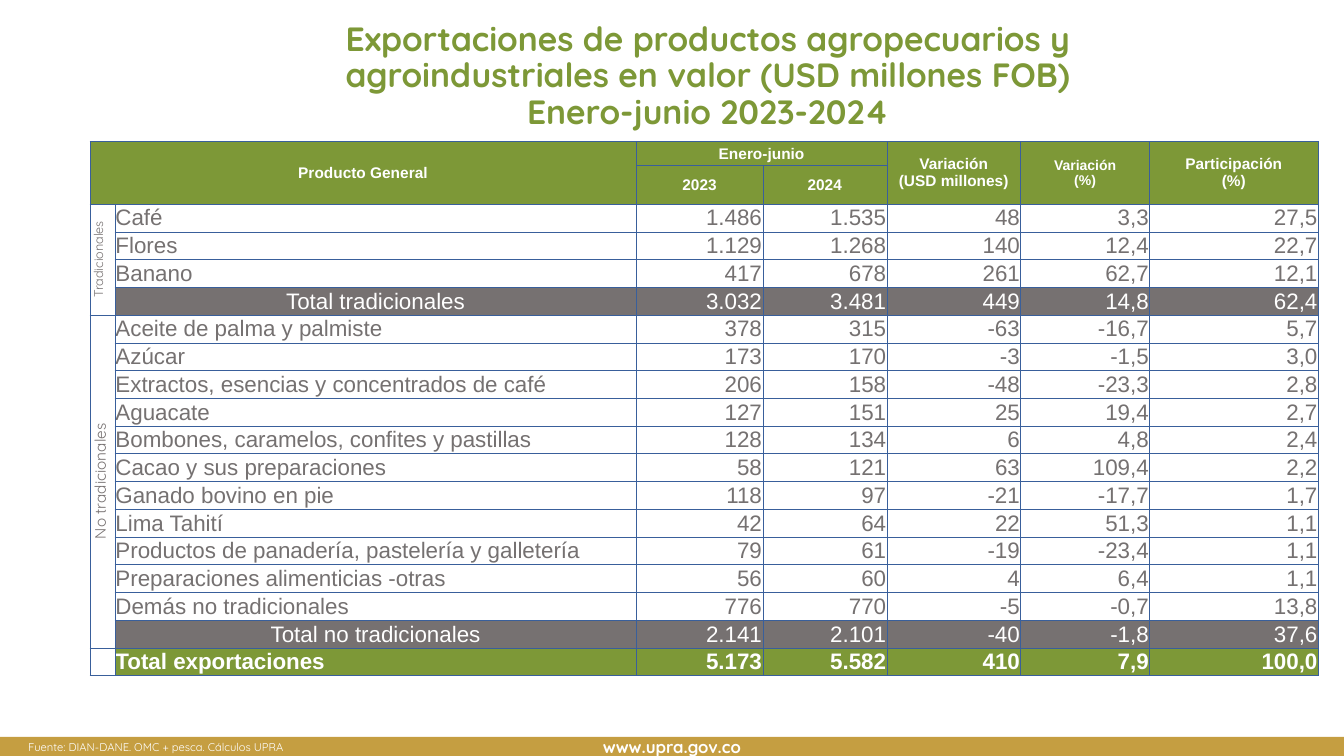
from dataclasses import dataclass

from lxml.etree import SubElement
from pptx import Presentation
from pptx.dml.color import RGBColor
from pptx.enum.shapes import MSO_SHAPE as Shape
from pptx.enum.text import MSO_ANCHOR as Anchor, MSO_AUTO_SIZE as AutoSize, PP_ALIGN as Align
from pptx.oxml.ns import qn
from pptx.slide import Slide
from pptx.table import Table, _Cell as Cell
from pptx.text.text import TextFrame, _Paragraph as Paragraph
from pptx.util import Cm, Pt

COLORS = {"green": "7D9837", "gold": "C59E41", "gray": "767171", "body": "757171",
          "white": "FFFFFF", "border": "395F9B"}
COLUMN_WIDTHS = [0.63, 13.15, 3.18, 3.13, 3.37, 3.25, 4.25]
HEADER_HEIGHTS = [0.61, 0.97]
ROW_HEIGHT = 0.7


@dataclass
class Style:
    size: float
    color: str
    font: str = "Arial"
    bold: bool = False
    align: Align = Align.CENTER
    fill: str = ""


@dataclass
class Heading:
    row: int
    column: int
    last_row: int
    last_column: int
    lines: list[str]
    size: float = 11


@dataclass
class Group:
    first_row: int
    last_row: int
    name: str
    size: float


@dataclass
class Product:
    name: str
    values: str
    kind: str = "item"


KINDS = {
    "item": Style(16, "body", align=Align.LEFT),
    "subtotal": Style(16, "white", fill="gray"),
    "total": Style(16, "white", bold=True, align=Align.LEFT, fill="green"),
}
HEADINGS = [
    Heading(0, 0, 1, 1, ["Producto General"]),
    Heading(0, 2, 0, 3, ["Enero-junio"]),
    Heading(1, 2, 1, 2, ["2023"]),
    Heading(1, 3, 1, 3, ["2024"]),
    Heading(0, 4, 1, 4, ["Variación", "(USD millones)"]),
    Heading(0, 5, 1, 5, ["Variación", "(%)"], 10),
    Heading(0, 6, 1, 6, ["Participación", "(%)"]),
]
GROUPS = [Group(2, 5, "Tradicionales", 9), Group(6, 17, "No tradicionales", 11)]
PRODUCTS = [
    Product("Café", "1.486 1.535 48 3,3 27,5"),
    Product("Flores", "1.129 1.268 140 12,4 22,7"),
    Product("Banano", "417 678 261 62,7 12,1"),
    Product("Total tradicionales", "3.032 3.481 449 14,8 62,4", "subtotal"),
    Product("Aceite de palma y palmiste", "378 315 -63 -16,7 5,7"),
    Product("Azúcar", "173 170 -3 -1,5 3,0"),
    Product("Extractos, esencias y concentrados de café", "206 158 -48 -23,3 2,8"),
    Product("Aguacate", "127 151 25 19,4 2,7"),
    Product("Bombones, caramelos, confites y pastillas", "128 134 6 4,8 2,4"),
    Product("Cacao y sus preparaciones", "58 121 63 109,4 2,2"),
    Product("Ganado bovino en pie", "118 97 -21 -17,7 1,7"),
    Product("Lima Tahití", "42 64 22 51,3 1,1"),
    Product("Productos de panadería, pastelería y galletería", "79 61 -19 -23,4 1,1"),
    Product("Preparaciones alimenticias -otras", "56 60 4 6,4 1,1"),
    Product("Demás no tradicionales", "776 770 -5 -0,7 13,8"),
    Product("Total no tradicionales", "2.141 2.101 -40 -1,8 37,6", "subtotal"),
    Product("Total exportaciones", "5.173 5.582 410 7,9 100,0", "total"),
]


def rgb(name: str) -> RGBColor:
    return RGBColor.from_string(COLORS[name])


def add_span(para: Paragraph, text: str, style: Style) -> None:
    span = para.add_run()
    span.text = text
    span.font.name = style.font
    span.font.size = Pt(style.size)
    span.font.bold = style.bold
    span.font.color.rgb = rgb(style.color)


def write(frame: TextFrame, lines: list[str], style: Style, align: Align) -> None:
    for index, line in enumerate(lines):
        para = frame.add_paragraph() if index else frame.paragraphs[0]
        para.alignment = align
        add_span(para, line, style)


def prepare_cell(cell: Cell) -> None:
    cell.margin_left = cell.margin_top = cell.margin_right = Cm(0.02)
    cell.margin_bottom = 0
    cell.vertical_anchor = Anchor.MIDDLE
    properties = cell._tc.get_or_add_tcPr()
    for side in ("lnL", "lnR", "lnT", "lnB"):
        line = SubElement(properties, qn(f"a:{side}"), w=str(Pt(0.25)))
        SubElement(SubElement(line, qn("a:solidFill")), qn("a:srgbClr"), val=COLORS["border"])
    cell.fill.background()


def fill_cell(cell: Cell, lines: list[str], style: Style, align: Align) -> None:
    write(cell.text_frame, lines, style, align)
    if style.fill:
        cell.fill.solid()
        cell.fill.fore_color.rgb = rgb(style.fill)


def fill_table(table: Table) -> None:
    for column, width in zip(table.columns, COLUMN_WIDTHS):
        column.width = Cm(width)
    for row, height in zip(table.rows, HEADER_HEIGHTS + [ROW_HEIGHT] * len(PRODUCTS)):
        row.height = Cm(height)
    for cell in table.iter_cells():
        prepare_cell(cell)
    for heading in HEADINGS:
        cell = table.cell(heading.row, heading.column)
        if (heading.row, heading.column) != (heading.last_row, heading.last_column):
            cell.merge(table.cell(heading.last_row, heading.last_column))
        style = Style(heading.size, "white", bold=True, fill="green")
        fill_cell(cell, heading.lines, style, Align.CENTER)
    for group in GROUPS:
        cell = table.cell(group.first_row, 0)
        cell.merge(table.cell(group.last_row, 0))
        cell._tc.get_or_add_tcPr().set("vert", "vert270")
        fill_cell(cell, [group.name], Style(group.size, "gray", "Quicksand"), Align.CENTER)
    for row, product in enumerate(PRODUCTS, len(HEADER_HEIGHTS)):
        style = KINDS[product.kind]
        fill_cell(table.cell(row, 1), [product.name], style, style.align)
        for column, value in enumerate(product.values.split(), 2):
            fill_cell(table.cell(row, column), [value], style, Align.RIGHT)
    for cell in table.iter_cells():
        para = cell.text_frame.paragraphs[0]
        if not para.runs:
            SubElement(para._p, qn("a:endParaRPr"), sz="800")


def add_title(page: Slide) -> None:
    title = page.shapes.title
    title.left, title.top, title.width, title.height = Cm(6.2), Cm(0.58), Cm(23.27), Cm(2.72)
    frame = title.text_frame
    frame.word_wrap = True
    frame.auto_size = AutoSize.NONE
    frame.vertical_anchor = Anchor.MIDDLE
    para = frame.paragraphs[0]
    para.alignment = Align.CENTER
    para.line_spacing = 0.9
    style = Style(24, "green", "Quicksand", True)
    add_span(para, "Exportaciones de productos agropecuarios y "
                   "agroindustriales en valor (USD millones FOB)", style)
    para.add_line_break()
    add_span(para, "Enero-junio 2023-2024", style)


def add_footer(page: Slide) -> None:
    bar = page.shapes.add_shape(Shape.RECTANGLE, 0, Cm(18.57), Cm(33.87), Cm(0.48))
    bar.shadow.inherit = False
    bar.fill.solid()
    bar.fill.fore_color.rgb = rgb("gold")
    bar.line.fill.background()
    frame = bar.text_frame
    frame.margin_top = frame.margin_bottom = 0
    frame.vertical_anchor = Anchor.MIDDLE
    write(frame, ["www.upra.gov.co"], Style(12, "white", "Quicksand", True), Align.CENTER)
    source = page.shapes.add_textbox(Cm(0.46), Cm(18.52), Cm(32.79), Cm(0.6))
    source.text_frame.word_wrap = True
    source.text_frame.auto_size = AutoSize.SHAPE_TO_FIT_TEXT
    write(source.text_frame, ["Fuente: DIAN-DANE. OMC + pesca. Cálculos UPRA"],
          Style(8, "white", "Quicksand"), Align.JUSTIFY)


def main() -> None:
    deck = Presentation()
    deck.slide_width, deck.slide_height = Cm(33.87), Cm(19.05)
    page = deck.slides.add_slide(deck.slide_layouts[5])
    add_title(page)
    add_footer(page)
    height = sum(HEADER_HEIGHTS) + ROW_HEIGHT * len(PRODUCTS)
    table = page.shapes.add_table(len(HEADER_HEIGHTS) + len(PRODUCTS), len(COLUMN_WIDTHS),
                                  Cm(2.26), Cm(3.56), Cm(sum(COLUMN_WIDTHS)), Cm(height)).table
    table.first_row = table.horz_banding = False
    fill_table(table)
    deck.save("out.pptx")


if __name__ == "__main__":
    main()
